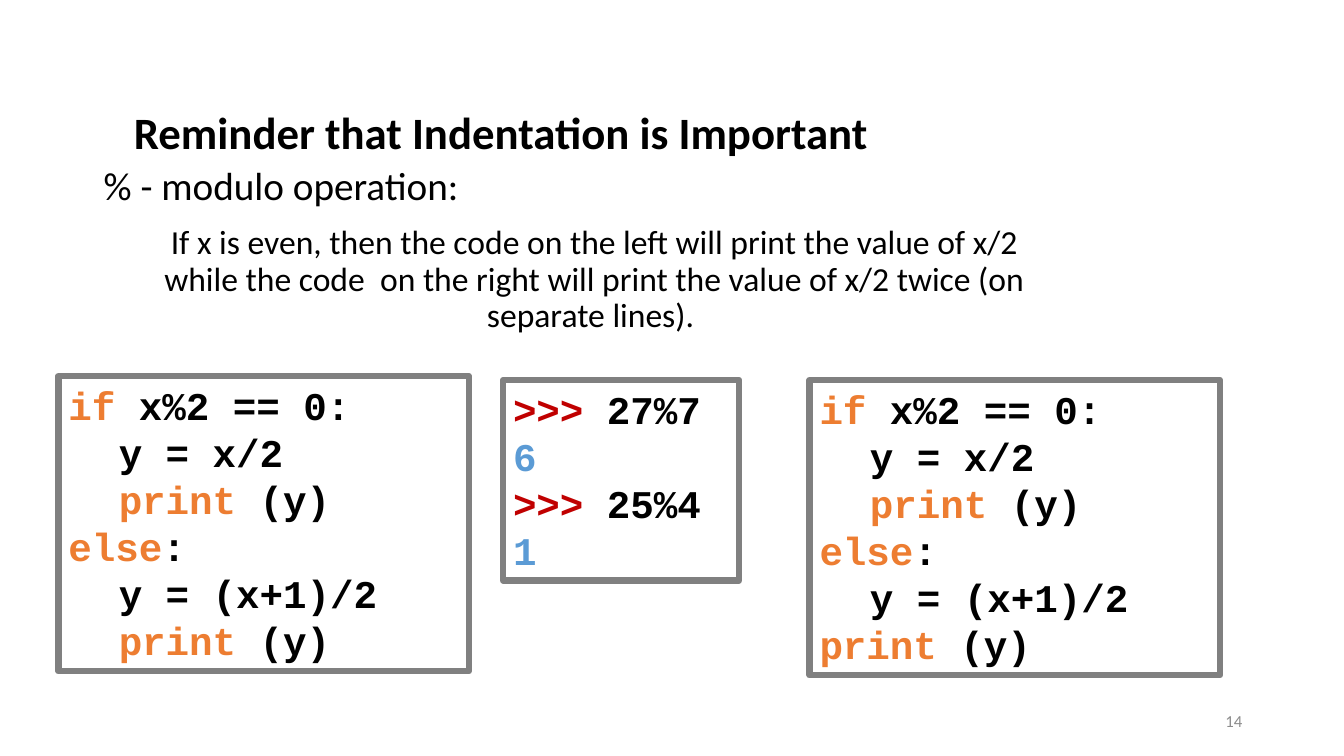
from dataclasses import dataclass

from pptx import Presentation
from pptx.dml.color import RGBColor
from pptx.enum.shapes import MSO_SHAPE
from pptx.enum.text import MSO_ANCHOR, PP_ALIGN
from pptx.util import Inches, Pt

RECTANGLE = MSO_SHAPE.RECTANGLE
TOP, MIDDLE = MSO_ANCHOR.TOP, MSO_ANCHOR.MIDDLE
LEFT, CENTER, RIGHT = PP_ALIGN.LEFT, PP_ALIGN.CENTER, PP_ALIGN.RIGHT

COLORS = {
    "text": "000000",
    "number": "8C8C8C",
    "border": "808080",
    "keyword": "ED7D31",
    "prompt": "C00000",
    "result": "5B9BD5",
}
CODE_FORMAT = {"name": "Courier New", "size": Pt(28), "bold": True}

Token = tuple[str, str]  # text, colour name
Line = list[Token]


@dataclass
class Label:
    text: str
    box: tuple[float, float, float, float]
    size: int
    bold: bool = False
    color: str = "text"
    align: PP_ALIGN = LEFT
    anchor: MSO_ANCHOR = TOP
    spacing: float = 1.0


@dataclass
class CodeBox:
    box: tuple[float, float, float, float]
    lines: list[Line]


def add_run(p, text: str, color: str, font_format: dict) -> None:
    r = p.add_run()
    r.text = text
    for name, value in font_format.items():
        setattr(r.font, name, value)
    r.font.color.rgb = RGBColor.from_string(COLORS[color])


def draw_label(slide, label: Label) -> None:
    tf = slide.shapes.add_textbox(*map(Inches, label.box)).text_frame
    tf.word_wrap = True
    tf.vertical_anchor = label.anchor
    p = tf.paragraphs[0]
    for name, value in {"alignment": label.align, "line_spacing": label.spacing}.items():
        setattr(p, name, value)
    font_format = {"name": "Calibri", "size": Pt(label.size), "bold": label.bold}
    add_run(p, label.text, label.color, font_format)


def draw_code_box(slide, code: CodeBox) -> None:
    sp = slide.shapes.add_shape(RECTANGLE, *map(Inches, code.box))
    sp.shadow.inherit = False
    sp.fill.background()
    sp.line.color.rgb = RGBColor.from_string(COLORS["border"])
    sp.line.width = Pt(4.5)
    tf = sp.text_frame
    tf.word_wrap = True
    tf.vertical_anchor = TOP
    for i, line in enumerate(code.lines):
        p = tf.add_paragraph() if i else tf.paragraphs[0]
        p.alignment = LEFT
        for text, color in line:
            add_run(p, text, color, CODE_FORMAT)


# Text around the code
LABELS = [
    Label("Reminder that Indentation is Important", (1.23, 0.9, 11.33, 0.88), 32,
          bold=True, anchor=MIDDLE, spacing=0.9),
    Label("% - modulo operation:", (0.93, 1.6, 11.5, 1.76), 28, spacing=0.9),
    Label("If x is even, then the code on the left will print the value of x/2 "
          "while the code  on the right will print the value of x/2 twice "
          "(on separate lines). ", (1.23, 2.19, 9.33, 1.92), 24,
          align=CENTER, spacing=0.9),
    Label("14", (9.42, 6.95, 3, 0.4), 12, color="number", align=RIGHT, anchor=MIDDLE),
]

# Code listings: both branches differ only in the indent of the last line
PRINT_Y: Line = [("print", "keyword"), (" (y)", "text")]
INDENTED_PRINT_Y: Line = [("\t", "text"), *PRINT_Y]
BRANCHES: list[Line] = [
    [("if", "keyword"), (" x%2 == 0:", "text")],
    [("\ty = x/2", "text")],
    INDENTED_PRINT_Y,
    [("else", "keyword"), (":", "text")],
    [("\ty = (x+1)/2", "text")],
]
MODULO_SESSION: list[Line] = [
    [(">>>", "prompt"), (" 27%7", "text")],
    [("6", "result")],
    [(">>>", "prompt"), (" 25%4", "text")],
    [("1", "result")],
]
CODE_BOXES = [
    CodeBox((4.99, 3.77, 2.34, 1.99), MODULO_SESSION),
    CodeBox((0.58, 3.73, 4.07, 2.93), BRANCHES + [INDENTED_PRINT_Y]),
    CodeBox((8.03, 3.77, 4.07, 2.93), BRANCHES + [PRINT_Y]),
]


def main() -> None:
    prs = Presentation()
    prs.slide_width, prs.slide_height = Inches(13.33), Inches(7.5)
    slide = prs.slides.add_slide(prs.slide_layouts[6])
    for label in LABELS:
        draw_label(slide, label)
    for code in CODE_BOXES:
        draw_code_box(slide, code)
    prs.save("out.pptx")


if __name__ == "__main__":
    main()
